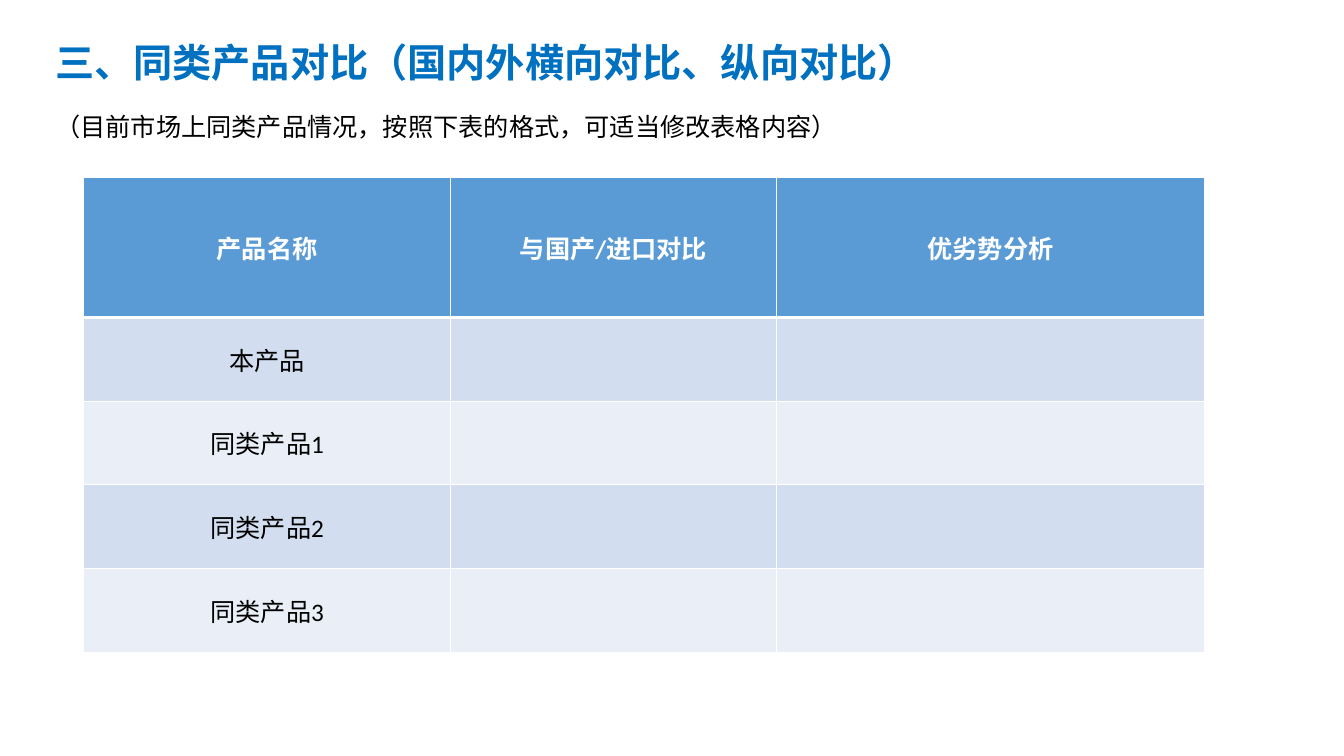
"""Build the slide that compares similar products in a table."""
from dataclasses import dataclass

from lxml.etree import SubElement
from pptx import Presentation
from pptx.dml.color import RGBColor
from pptx.enum.text import MSO_ANCHOR, PP_ALIGN
from pptx.oxml.ns import qn
from pptx.slide import Slide
from pptx.table import _Cell
from pptx.text.text import _Paragraph
from pptx.util import Inches, Pt


@dataclass(frozen=True)
class Theme:
    """Colours, fonts and sizes of the slide."""

    title: str = "0070C0"
    ink: str = "000000"
    white: str = "FFFFFF"
    header: str = "5B9BD5"
    bands: tuple[str, str] = ("D2DEEF", "EAEFF7")
    title_font: str = "Noto Sans CJK SC"
    body_font: str = "Calibri"
    title_size: int = 28
    body_size: int = 18
    grid_width: int = 1
    header_rule_width: int = 3


THEME = Theme()


@dataclass(frozen=True)
class Style:
    """Look of one paragraph."""

    font: str
    size: int
    color: str
    bold: bool = False


@dataclass(frozen=True)
class Heading:
    """A line of text above the table, placed in inches."""

    text: str
    top: float
    width: float
    height: float
    style: Style
    line_spacing: float = 1.0


TITLE_STYLE = Style(THEME.title_font, THEME.title_size, THEME.title, True)
BODY_STYLE = Style(THEME.body_font, THEME.body_size, THEME.ink)
HEADER_STYLE = Style(THEME.body_font, THEME.body_size, THEME.white, True)

HEADINGS = (
    Heading("（目前市场上同类产品情况，按照下表的格式，可适当修改表格内容）",
            0.9, 12.12, 0.55, BODY_STYLE, 1.5),
    Heading("三、同类产品对比（国内外横向对比、纵向对比）",
            0.33, 11.23, 0.57, TITLE_STYLE),
)
HEADING_LEFT = 0.45

COLUMNS = (("产品名称", 3.64), ("与国产/进口对比", 3.23), ("优劣势分析", 4.25))
PRODUCTS = ("本产品", *(f"同类产品{number}" for number in range(1, 4)))
TABLE_LEFT, TABLE_TOP = 0.83, 1.76
HEADER_HEIGHT, PRODUCT_HEIGHT = 1.39, 0.83


def apply_style(paragraph: _Paragraph, style: Style) -> None:
    """Set the font of a whole paragraph."""
    font = paragraph.font
    font.name = style.font
    font.size = Pt(style.size)
    font.bold = style.bold
    font.color.rgb = RGBColor.from_string(style.color)


def add_heading(slide: Slide, heading: Heading) -> None:
    """Add one line of text above the table."""
    frame = slide.shapes.add_textbox(
        Inches(HEADING_LEFT), Inches(heading.top),
        Inches(heading.width), Inches(heading.height)).text_frame
    frame.word_wrap = True
    paragraph = frame.paragraphs[0]
    paragraph.text = heading.text
    paragraph.line_spacing = heading.line_spacing
    apply_style(paragraph, heading.style)


def add_borders(cell: _Cell, top: int, bottom: int) -> None:
    """Draw the four white borders of a cell, widths in points."""
    properties = cell._tc.get_or_add_tcPr()
    widths = {"L": THEME.grid_width, "R": THEME.grid_width, "T": top, "B": bottom}
    for side, width in widths.items():
        border = SubElement(properties, qn(f"a:ln{side}"), w=str(Pt(width)))
        SubElement(SubElement(border, qn("a:solidFill")),
                   qn("a:srgbClr"), val=THEME.white)


def fill_cell(cell: _Cell, text: str, row: int) -> None:
    """Write and colour one cell according to its row."""
    is_header = row == 0
    add_borders(cell,
                THEME.header_rule_width if row == 1 else THEME.grid_width,
                THEME.header_rule_width if is_header else THEME.grid_width)
    cell.fill.solid()
    color = THEME.header if is_header else THEME.bands[(row - 1) % 2]
    cell.fill.fore_color.rgb = RGBColor.from_string(color)
    cell.vertical_anchor = MSO_ANCHOR.MIDDLE
    paragraph = cell.text_frame.paragraphs[0]
    paragraph.text = text
    paragraph.alignment = PP_ALIGN.CENTER
    apply_style(paragraph, HEADER_STYLE if is_header else BODY_STYLE)


def add_comparison(slide: Slide) -> None:
    """Add the table that compares the products."""
    titles, widths = zip(*COLUMNS)
    heights = (HEADER_HEIGHT, *[PRODUCT_HEIGHT] * len(PRODUCTS))
    blanks = [""] * (len(COLUMNS) - 1)
    contents = (titles, *((product, *blanks) for product in PRODUCTS))
    comparison = slide.shapes.add_table(
        len(heights), len(widths), Inches(TABLE_LEFT), Inches(TABLE_TOP),
        Inches(sum(widths)), Inches(sum(heights))).table
    for column, width in zip(comparison.columns, widths):
        column.width = Inches(width)
    for row, (height, texts) in enumerate(zip(heights, contents)):
        comparison.rows[row].height = Inches(height)
        for column, text in enumerate(texts):
            fill_cell(comparison.cell(row, column), text, row)


def main() -> None:
    """Build and save the presentation."""
    presentation = Presentation()
    presentation.slide_width = Inches(13.33)
    presentation.slide_height = Inches(7.5)
    slide = presentation.slides.add_slide(presentation.slide_layouts[6])
    for heading in HEADINGS:
        add_heading(slide, heading)
    add_comparison(slide)
    presentation.save("out.pptx")


if __name__ == "__main__":
    main()
